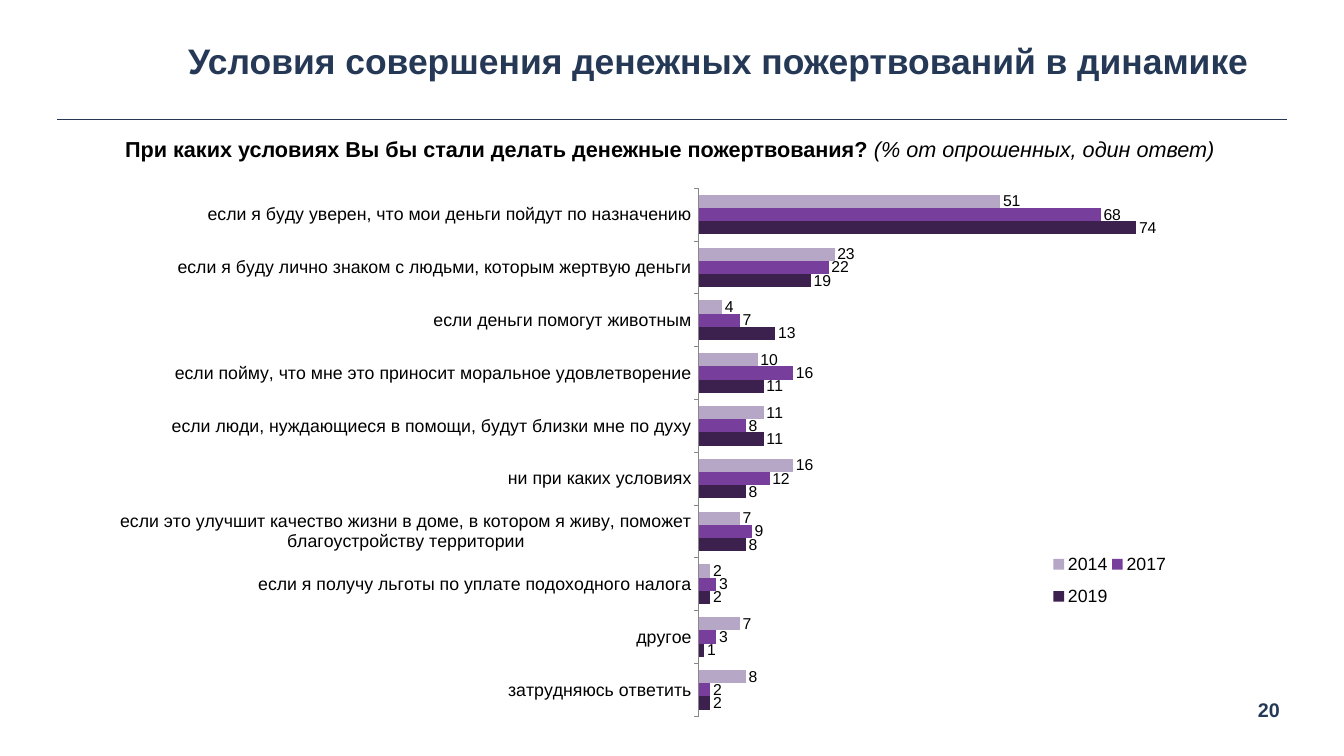
from lxml import etree
from pptx import Presentation
from pptx.chart.data import CategoryChartData
from pptx.dml.color import RGBColor
from pptx.enum.chart import XL_CHART_TYPE, XL_LABEL_POSITION, XL_LEGEND_POSITION, XL_TICK_MARK
from pptx.enum.shapes import MSO_CONNECTOR
from pptx.enum.text import MSO_ANCHOR, PP_ALIGN
from pptx.oxml.ns import qn
from pptx.util import Pt

BARS = XL_CHART_TYPE.BAR_CLUSTERED
OUTSIDE = XL_LABEL_POSITION.OUTSIDE_END
RIGHT = XL_LEGEND_POSITION.RIGHT
NO_TICK, OUT_TICK = XL_TICK_MARK.NONE, XL_TICK_MARK.OUTSIDE
STRAIGHT = MSO_CONNECTOR.STRAIGHT
MIDDLE, TOP = MSO_ANCHOR.MIDDLE, MSO_ANCHOR.TOP
CENTER = PP_ALIGN.CENTER

FONT = "Arial"
COLORS = {
    "navy": "253957", "black": "000000", "axis": "888888",
    "2019": "3C204E", "2017": "773F9B", "2014": "B6A7C6",
}
YEARS = ("2019", "2017", "2014")
ANSWERS = [
    ("затрудняюсь ответить", 2, 2, 8),
    ("другое", 1, 3, 7),
    ("если я получу льготы по уплате подоходного налога", 2, 3, 2),
    ("если это улучшит качество жизни в доме, в котором я живу, "
     "поможет благоустройству территории", 8, 9, 7),
    ("ни при каких условиях", 8, 12, 16),
    ("если люди, нуждающиеся в помощи, будут близки мне по духу", 11, 8, 11),
    ("если пойму, что мне это приносит моральное удовлетворение", 11, 16, 10),
    ("если деньги помогут животным", 13, 7, 4),
    ("если я буду лично знаком с людьми, которым жертвую деньги", 19, 22, 23),
    ("если я буду уверен, что мои деньги пойдут по назначению", 74, 68, 51),
]


def color(name):
    return RGBColor.from_string(COLORS[name])


def style(font, size, name="black", bold=None):
    font.name = FONT
    font.size = Pt(size)
    font.color.rgb = color(name)
    font.bold = bold


def place(shape, box):
    shape.left, shape.top, shape.width, shape.height = map(Pt, box)


def fill_text(shape, parts, size, name, anchor=TOP, wrap=True):
    frame = shape.text_frame
    frame.word_wrap = wrap
    frame.vertical_anchor = anchor
    frame.margin_left = frame.margin_right = Pt(6.5)
    frame.margin_top = frame.margin_bottom = Pt(6.5)
    para = frame.paragraphs[0]
    para.alignment = CENTER
    for part in parts:
        para.add_run().text = part
    style(para.font, size, name, True)
    return para


def add_title(slide, box):
    title = slide.shapes.title
    place(title, box)
    fill_text(title, ["Условия совершения денежных пожертвований в динамике"],
              36, "navy", MIDDLE)


def add_rule(slide, left, top, width):
    rule = slide.shapes.add_connector(
        STRAIGHT, Pt(left), Pt(top), Pt(left + width), Pt(top))
    rule.line.color.rgb = color("navy")
    rule.line.width = Pt(1)
    etree.SubElement(rule._element.spPr, qn("a:effectLst"))


def add_query(slide, box):
    query = slide.shapes.add_textbox(*map(Pt, box))
    para = fill_text(query, [
        "При каких условиях Вы бы стали делать денежные пожертвования? ",
        "(% от опрошенных, один ответ)"], 22, "black")
    note = para.runs[1].font
    note.bold = False
    note.italic = True


def add_page(slide, box):
    page = slide.shapes.add_textbox(*map(Pt, box))
    fill_text(page, ["20"], 20, "navy", wrap=False)


def set_layout(parent, index, box, inner=False):
    for old in parent.findall(qn("c:layout")):
        parent.remove(old)
    layout = etree.Element(qn("c:layout"))
    manual = etree.SubElement(layout, qn("c:manualLayout"))
    items = [("layoutTarget", "inner")] if inner else []
    items += [("xMode", "edge"), ("yMode", "edge")]
    items += zip("xywh", box)
    for tag, value in items:
        etree.SubElement(manual, qn(f"c:{tag}")).set("val", str(value))
    parent.insert(index, layout)


def style_axes(chart):
    cats = chart.category_axis
    cats.major_tick_mark = OUT_TICK
    cats.format.line.color.rgb = color("axis")
    cats.format.line.width = Pt(0.75)
    style(cats.tick_labels.font, 18)
    vals = chart.value_axis
    vals.visible = False
    vals.has_major_gridlines = False
    vals.major_tick_mark = NO_TICK
    vals.minimum_scale, vals.maximum_scale = 0, 80


def style_bars(plot):
    plot.gap_width = 100
    plot.overlap = 0
    plot.vary_by_categories = False
    for bars in plot.series:
        bars.invert_if_negative = False
        bars.format.fill.solid()
        bars.format.fill.fore_color.rgb = color(bars.name)
        labels = bars.data_labels
        labels.show_value = True
        labels.position = OUTSIDE
        labels.number_format = "0"
        labels.number_format_is_linked = False
        style(labels.font, 16)


def add_legend(chart):
    chart.has_legend = True
    legend = chart.legend
    legend.position = RIGHT
    legend.include_in_layout = False
    style(legend.font, 18)
    set_layout(legend._element, 1, (0.84, 0.68, 0.11, 0.14))


def add_bars(slide, box):
    data = CategoryChartData()
    names, *columns = zip(*ANSWERS)
    data.categories = names
    for year, values in zip(YEARS, columns):
        data.add_series(year, values)
    chart = slide.shapes.add_chart(BARS, *map(Pt, box), data).chart
    chart.has_title = False
    style(chart.font, 18)
    style_axes(chart)
    style_bars(chart.plots[0])
    add_legend(chart)
    area = chart._chartSpace.chart.plotArea
    set_layout(area, 0, (0.524, 0.032, 0.427, 0.967), True)


def main():
    deck = Presentation()
    deck.slide_width, deck.slide_height = Pt(1365.12), Pt(768.24)
    slide = deck.slides.add_slide(deck.slide_layouts[5])
    add_rule(slide, 58.3, 121.7, 1249.2)
    add_page(slide, (1270, 702.7, 37.5, 37.5))
    add_title(slide, (154.8, 23, 1149.8, 76.3))
    add_query(slide, (115.2, 131.8, 1130.4, 41.8))
    add_bars(slide, (119.5, 173.5, 1126, 555))
    deck.save("out.pptx")


if __name__ == "__main__":
    main()
